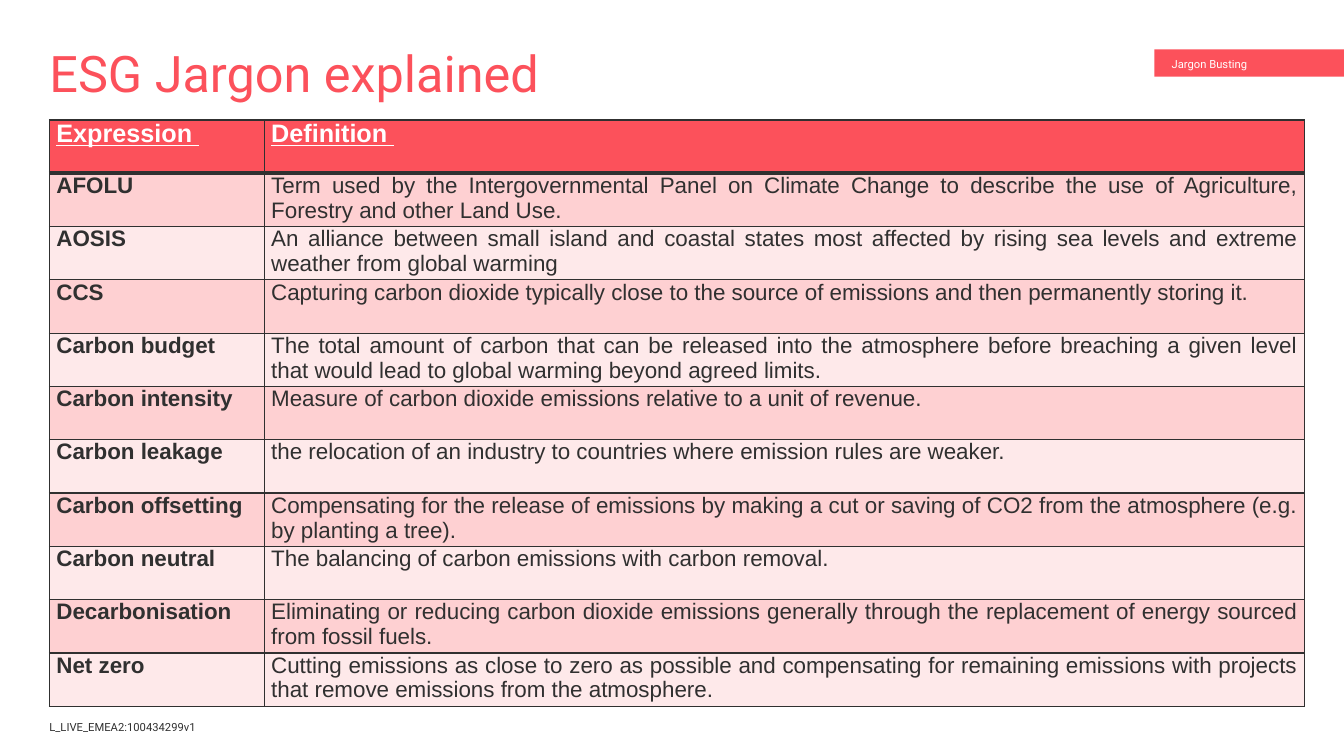
from dataclasses import dataclass

from lxml.etree import SubElement
from pptx import Presentation
from pptx.dml.color import RGBColor
from pptx.enum.text import MSO_ANCHOR as Anchor, MSO_AUTO_SIZE as AutoSize, PP_ALIGN as Align
from pptx.oxml.ns import qn
from pptx.util import Inches, Pt


@dataclass(frozen=True)
class Theme:
    red: str = "FC515B"
    pink: str = "FED0D2"
    blush: str = "FEE9EA"
    ink: str = "303030"
    white: str = "FFFFFF"
    display_font: str = "Roboto"
    table_font: str = "Arial"
    title_size: int = 36
    header_size: int = 18
    cell_size: int = 16
    small_size: int = 8


THEME = Theme()

HEADINGS = ("Expression ", "Definition ")
GLOSSARY = [
    ("AFOLU", "Term used by the Intergovernmental Panel on Climate Change to describe "
     "the use of Agriculture, Forestry and other Land Use."),
    ("AOSIS", "An alliance between small island and coastal states most affected by "
     "rising sea levels and extreme weather from global warming"),
    ("CCS", "Capturing carbon dioxide typically close to the source of emissions and "
     "then permanently storing it."),
    ("Carbon budget", "The total amount of carbon that can be released into the atmosphere "
     "before breaching a given level that would lead to global warming beyond agreed limits."),
    ("Carbon intensity", "Measure of carbon dioxide emissions relative to a unit of revenue."),
    ("Carbon leakage", "the relocation of an industry to countries where emission rules "
     "are weaker."),
    ("Carbon offsetting", "Compensating for the release of emissions by making a cut or saving "
     "of CO2 from the atmosphere (e.g. by planting a tree)."),
    ("Carbon neutral", "The balancing of carbon emissions with carbon removal."),
    ("Decarbonisation", "Eliminating or reducing carbon dioxide emissions generally through "
     "the replacement of energy sourced from fossil fuels."),
    ("Net zero", "Cutting emissions as close to zero as possible and compensating for "
     "remaining emissions with projects that remove emissions from the atmosphere."),
]
LEFT_ALIGNED_TERMS = {"Carbon leakage", "Carbon neutral"}


def add_run(paragraph, text, size, color, font, bold=False, underline=False):
    run = paragraph.add_run()
    run.text = text
    run.font.name = font
    run.font.size = Pt(size)
    run.font.color.rgb = RGBColor.from_string(color)
    run.font.bold = bold
    run.font.underline = underline


def write_label(shape, box, text, size, color, anchor, line_spacing=1.0, left_inset=0.0):
    """Place a shape and fill it with one left-aligned line in the display font."""
    shape.left, shape.top, shape.width, shape.height = map(Inches, box)
    frame = shape.text_frame
    frame.word_wrap = True
    frame.auto_size = AutoSize.NONE
    frame.vertical_anchor = anchor
    frame.margin_left = Inches(left_inset)
    frame.margin_top = frame.margin_right = frame.margin_bottom = 0
    line = frame.paragraphs[0]
    line.alignment = Align.LEFT
    line.line_spacing = line_spacing
    line.space_before = Pt(0)
    add_run(line, text, size, color, THEME.display_font)


def remove_bullet(paragraph):
    properties = paragraph._p.get_or_add_pPr()
    properties.set("marL", "0")
    properties.set("indent", "0")
    SubElement(properties, qn("a:buNone"))


def add_section_tag(placeholder):
    remove_bullet(placeholder.text_frame.paragraphs[0])
    placeholder.fill.solid()
    placeholder.fill.fore_color.rgb = RGBColor.from_string(THEME.red)
    write_label(placeholder, (11.45, 0.49, 1.88, 0.27), "Jargon Busting",
                THEME.small_size, THEME.white, Anchor.MIDDLE, 1.2, 0.17)


def set_borders(cell, bottom=1):
    properties = cell._tc.get_or_add_tcPr()
    for side, width in (("L", 1), ("R", 1), ("T", 1), ("B", bottom)):
        border = SubElement(properties, qn(f"a:ln{side}"), w=str(Pt(width)))
        fill = SubElement(border, qn("a:solidFill"))
        SubElement(fill, qn("a:srgbClr"), val=THEME.ink)


def write_cell(cell, text, fill, size, color, bold, heading=False, justified=True):
    set_borders(cell, bottom=3 if heading else 1)
    cell.fill.solid()
    cell.fill.fore_color.rgb = RGBColor.from_string(fill)
    cell.margin_left = cell.margin_right = Inches(0.07)
    cell.margin_top = cell.margin_bottom = 0
    paragraph = cell.text_frame.paragraphs[0]
    if justified:
        paragraph.alignment = Align.JUSTIFY
        paragraph.space_after = Pt(13)
    add_run(paragraph, text, size, color, THEME.table_font, bold, heading)


def add_glossary(slide):
    table = slide.shapes.add_table(len(GLOSSARY) + 1, len(HEADINGS), Inches(0.49),
                                   Inches(1.19), Inches(12.45), Inches(5.82)).table
    table.first_row = table.horz_banding = False
    for column, width in zip(table.columns, (2.13, 10.32)):
        column.width = Inches(width)
    for column, heading in enumerate(HEADINGS):
        write_cell(table.cell(0, column), heading, THEME.red, THEME.header_size,
                   THEME.white, bold=True, heading=True)
    for row, (term, definition) in enumerate(GLOSSARY, start=1):
        band = THEME.pink if row % 2 else THEME.blush
        write_cell(table.cell(row, 0), term, band, THEME.cell_size, THEME.ink, bold=True)
        write_cell(table.cell(row, 1), definition, band, THEME.cell_size, THEME.ink,
                   bold=False, justified=term not in LEFT_ALIGNED_TERMS)


def main():
    deck = Presentation()
    deck.slide_width, deck.slide_height = Inches(13.33), Inches(7.5)
    slide = deck.slides.add_slide(deck.slide_layouts[1])

    reference = slide.shapes.add_textbox(0, 0, 0, 0)
    write_label(reference, (0.49, 7.01, 4.17, 0.27), "L_LIVE_EMEA2:100434299v1",
                THEME.small_size, THEME.ink, Anchor.BOTTOM)
    write_label(slide.shapes.title, (0.49, 0.49, 9.57, 0.43), "ESG Jargon explained",
                THEME.title_size, THEME.red, Anchor.TOP, 0.9)
    add_glossary(slide)
    add_section_tag(slide.placeholders[1])

    deck.save("out.pptx")


if __name__ == "__main__":
    main()
